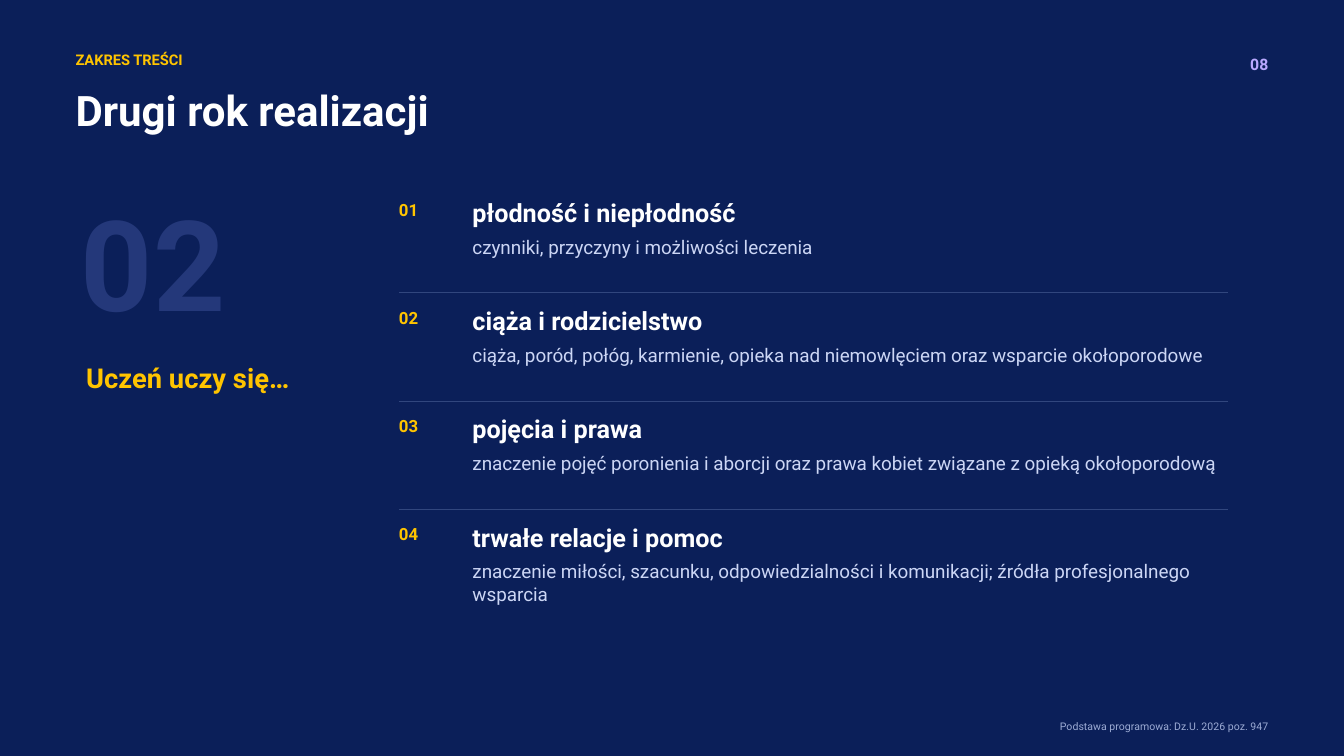
from pptx import Presentation
from pptx import util as u
from pptx.dml.color import RGBColor
from pptx.enum import shapes, text
from lxml import etree

PX = 9525
NAVY = RGBColor(0x0B, 0x1F, 0x59)
GHOST = RGBColor(0x24, 0x38, 0x7A)
RULE = RGBColor(0x31, 0x46, 0x7E)
GOLD = RGBColor(0xFF, 0xC4, 0x00)
WHITE = RGBColor(0xFF, 0xFF, 0xFF)
LILAC = RGBColor(0xB9, 0xA8, 0xFF)
PALE = RGBColor(0xCC, 0xD6, 0xF5)
GREY = RGBColor(0x9D, 0xAC, 0xD5)

deck = Presentation()
deck.slide_width = 1280 * PX
deck.slide_height = 720 * PX
slide = deck.slides.add_slide(deck.slide_layouts[5])
slide.background.fill.solid()
slide.background.fill.fore_color.rgb = NAVY


def write(words, left, top, width, height, size, color, bold=True, right=False, box=None):
    box = box or slide.shapes.add_textbox(0, 0, 0, 0)
    box.left, box.top, box.width, box.height = [n * PX for n in (left, top, width, height)]
    frame = box.text_frame
    frame.word_wrap = True
    frame.auto_size = text.MSO_AUTO_SIZE.NONE
    frame.vertical_anchor = text.MSO_ANCHOR.TOP
    frame.margin_left = frame.margin_top = frame.margin_right = frame.margin_bottom = 0
    para = frame.paragraphs[0]
    para.alignment = text.PP_ALIGN.RIGHT if right else text.PP_ALIGN.LEFT
    run = para.add_run()
    run.text = words
    run.font.name = "Roboto"
    run.font.size = u.Pt(size)
    run.font.bold = bold
    run.font.color.rgb = color


write("ZAKRES TREŚCI", 72, 48, 700, 24, 10.5, GOLD)
write("Drugi rok realizacji", 72, 80, 1040, 78, 30, WHITE, box=slide.shapes.title)
write("08", 1160, 52, 48, 26, 11.3, LILAC, right=True)
write("02", 77, 177, 260, 150, 90, GHOST)
write("Uczeń uczy się…", 82, 344, 260, 44, 19.5, GOLD)

topics = [
    ("płodność i niepłodność", "czynniki, przyczyny i możliwości leczenia"),
    ("ciąża i rodzicielstwo",
     "ciąża, poród, połóg, karmienie, opieka nad niemowlęciem oraz wsparcie okołoporodowe"),
    ("pojęcia i prawa",
     "znaczenie pojęć poronienia i aborcji oraz prawa kobiet związane z opieką okołoporodową"),
    ("trwałe relacje i pomoc",
     "znaczenie miłości, szacunku, odpowiedzialności i komunikacji; źródła profesjonalnego wsparcia"),
]
for i, (head, note) in enumerate(topics):
    top = 188 + 103 * i
    if i:
        y = (top - 12) * PX
        rule = slide.shapes.add_connector(shapes.MSO_CONNECTOR.STRAIGHT, 380 * PX, y, 1170 * PX, y)
        rule.line.color.rgb = RULE
        rule.line.width = u.Pt(0.75)
        props = rule._element.spPr
        etree.SubElement(props, "{http://schemas.openxmlformats.org/drawingml/2006/main}effectLst")
    write(f"{i + 1:02}", 380, top + 2, 48, 25, 12, GOLD)
    write(head, 450, top, 680, 30, 18, WHITE)
    write(note, 450, top + 36, 720, 52, 13.5, PALE, bold=False)

write("Podstawa programowa: Dz.U. 2026 poz. 947", 765, 686, 443, 18, 7.5, GREY, bold=False, right=True)

deck.save("out.pptx")
